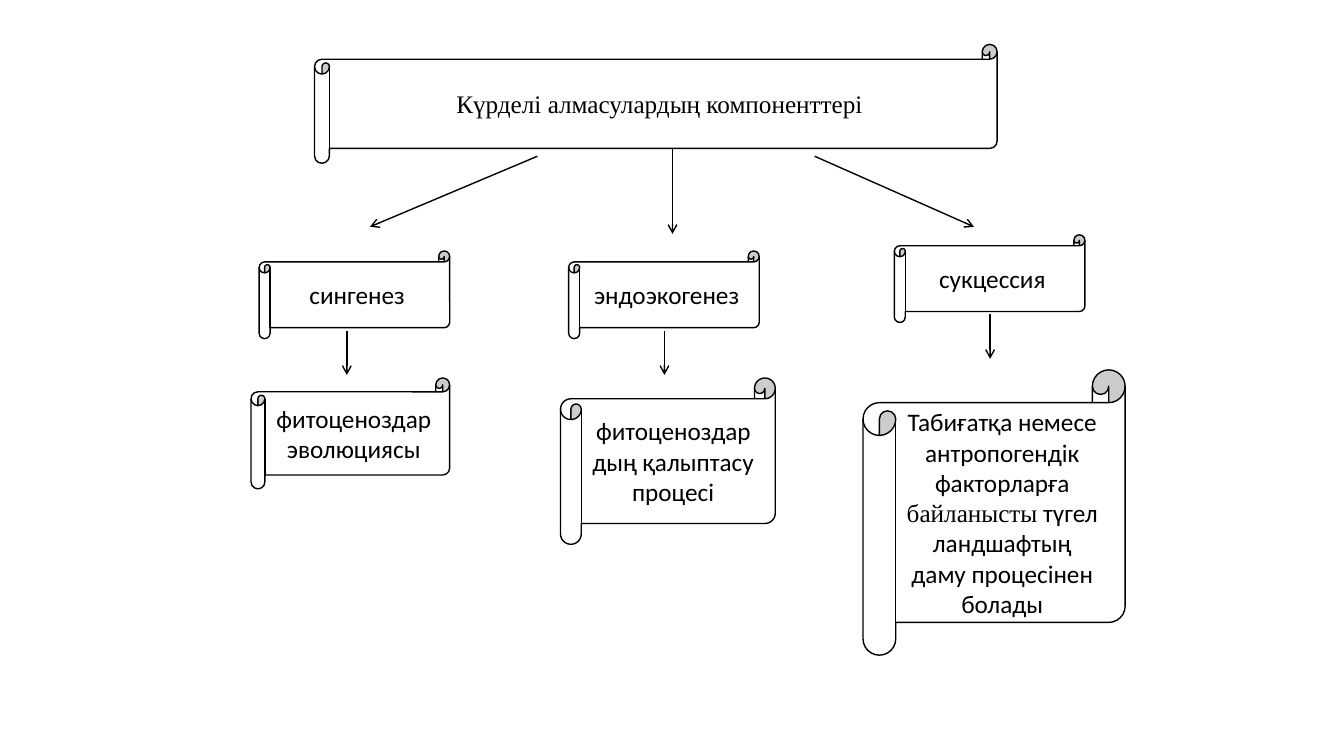
from dataclasses import dataclass

import pptx
import pptx.dml.color
import pptx.enum.shapes
import pptx.enum.text
import pptx.oxml
import pptx.oxml.ns
import pptx.slide
import pptx.util

PX = 9144  # EMU per px, 100 px to the inch
BLACK = "000000"
WHITE = "FFFFFF"
SANS = "Calibri"
SERIF = "Times New Roman"


@dataclass(frozen=True)
class Piece:
    text: str
    font: str = SANS


@dataclass(frozen=True)
class Scroll:
    left: int
    top: int
    width: int
    height: int
    pieces: tuple[Piece, ...]


@dataclass(frozen=True)
class Arrow:
    x1: int
    y1: int
    x2: int
    y2: int


@dataclass(frozen=True)
class Branch:
    link: Arrow
    name: Scroll
    meaning: Scroll
    arrow_x: int


NAME_WIDTH, NAME_HEIGHT = 189, 87
ARROW_DROP, ARROW_LENGTH = 79, 44

TITLE = Scroll(312, 44, 677, 118,
               (Piece("Күрделі алмасулардың компоненттері", SERIF),))


def name_scroll(left: int, top: int, text: str) -> Scroll:
    return Scroll(left, top, NAME_WIDTH, NAME_HEIGHT, (Piece(text),))


BRANCHES = (
    Branch(
        Arrow(533, 155, 367, 225),
        name_scroll(257, 249, "сингенез"),
        Scroll(249, 375, 197, 110, (Piece("фитоценоздар эволюциясы"),)),
        344,
    ),
    Branch(
        Arrow(667, 147, 667, 232),
        name_scroll(564, 249, "эндоэкогенез"),
        Scroll(556, 375, 213, 165,
               (Piece("фитоценоздардың қалыптасу процесі"),)),
        659,
    ),
    Branch(
        Arrow(808, 155, 966, 225),
        name_scroll(887, 233, "сукцессия"),
        Scroll(856, 367, 260, 283, (
            Piece("Табиғатқа немесе антропогендік факторларға "),
            Piece("байланысты", SERIF),
            Piece(" түгел ландшафтың даму процесінен болады"),
        )),
        982,
    ),
)


def px(length: int) -> pptx.util.Emu:
    return pptx.util.Emu(length * PX)


def color(value: str) -> pptx.dml.color.RGBColor:
    return pptx.dml.color.RGBColor.from_string(value)


def draw_scroll(page: pptx.slide.Slide, scroll: Scroll) -> None:
    shape = page.shapes.add_shape(
        pptx.enum.shapes.MSO_SHAPE.HORIZONTAL_SCROLL,
        px(scroll.left), px(scroll.top), px(scroll.width), px(scroll.height))
    shape.shadow.inherit = False
    shape.fill.solid()
    shape.fill.fore_color.rgb = color(WHITE)
    shape.line.color.rgb = color(BLACK)
    shape.line.width = pptx.util.Pt(1)
    frame = shape.text_frame
    frame.word_wrap = True
    frame.vertical_anchor = pptx.enum.text.MSO_ANCHOR.MIDDLE
    para = frame.paragraphs[0]
    para.alignment = pptx.enum.text.PP_ALIGN.CENTER
    for piece in scroll.pieces:
        span = para.add_run()
        span.text = piece.text
        span.font.name = piece.font
        span.font.size = pptx.util.Pt(18)
        span.font.color.rgb = color(BLACK)


def draw_arrow(page: pptx.slide.Slide, arrow: Arrow) -> None:
    connector = page.shapes.add_connector(
        pptx.enum.shapes.MSO_CONNECTOR.STRAIGHT,
        px(arrow.x1), px(arrow.y1), px(arrow.x2), px(arrow.y2))
    connector.line.color.rgb = color(BLACK)
    connector.line.width = pptx.util.Pt(1)
    namespace = pptx.oxml.ns.nsdecls("a")
    connector.line._get_or_add_ln().append(
        pptx.oxml.parse_xml(f'<a:tailEnd {namespace} type="arrow"/>'))
    connector._element.spPr.append(
        pptx.oxml.parse_xml(f"<a:effectLst {namespace}/>"))


def draw_branch(page: pptx.slide.Slide, branch: Branch) -> None:
    start = branch.name.top + ARROW_DROP
    draw_arrow(page, branch.link)
    draw_scroll(page, branch.name)
    draw_arrow(page, Arrow(branch.arrow_x, start,
                           branch.arrow_x, start + ARROW_LENGTH))
    draw_scroll(page, branch.meaning)


def main() -> None:
    deck = pptx.Presentation()
    deck.slide_width = px(1333)
    deck.slide_height = px(750)
    page = deck.slides.add_slide(deck.slide_layouts[6])
    draw_scroll(page, TITLE)
    for branch in BRANCHES:
        draw_branch(page, branch)
    deck.save("out.pptx")


if __name__ == "__main__":
    main()
